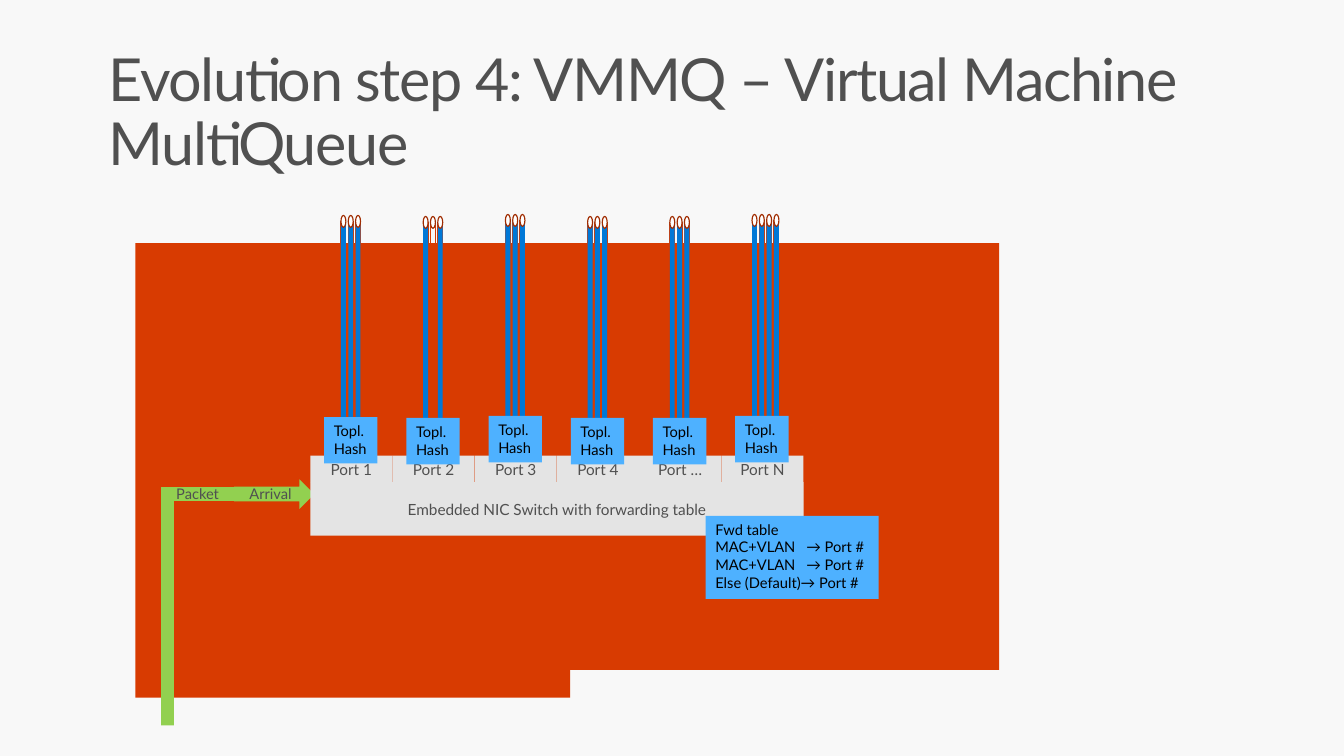
import pptx
import pptx.util
import pptx.dml.color
import pptx.enum.shapes
import pptx.enum.text
import pptx.oxml
import pptx.oxml.ns

Inches = pptx.util.Inches
KIND = pptx.enum.shapes.MSO_SHAPE
ALIGN = pptx.enum.text.PP_ALIGN
ANCHOR = pptx.enum.text.MSO_ANCHOR
GRAY, ORANGE, BLUE, SKY, GREEN, PALE = "505050", "D83B01", "0078D7", "4EB1FF", "92D050", "E4E4E4"
STEP = 0.832
PORTS = [("Port 1", 4.22), ("Port 2", 4.23), ("Port 3", 4.21),
         ("Port 4", 4.23), ("Port …", 4.23), ("Port N", 4.21)]


def paint(target, color):
    if hasattr(target, "solid"):
        target.solid()
        target = target.fore_color
    target.rgb = pptx.dml.color.RGBColor.from_string(color)


def write(shape, text, size, color=GRAY, align=ALIGN.CENTER, **frame):
    """Set the text; frame holds values for the text frame."""
    body = shape.text_frame
    body.text = text
    for name, value in frame.items():
        setattr(body, name, value)
    for para in body.paragraphs:
        para.alignment = align
        for name, value in {"name": "Lato", "size": pptx.util.Pt(size)}.items():
            setattr(para.font, name, value)
        paint(para.font.color, color)
    return body


def add_box(shapes, box, fill, kind=KIND.RECTANGLE, edge=None):
    shape = shapes.add_shape(kind, *map(Inches, box))
    shape.shadow.inherit = False
    paint(shape.fill, fill)
    if edge:
        paint(shape.line.fill, edge)
        shape.line.width = pptx.util.Pt(0.85)
    else:
        shape.line.fill.background()
    return shape


def add_line(shapes, x, top, end):
    line = shapes.add_connector(pptx.enum.shapes.MSO_CONNECTOR.STRAIGHT,
                                *map(Inches, (x, top, x, end)))
    paint(line.line.fill, ORANGE)
    line.line.width = pptx.util.Pt(0.75)
    props = line._element.spPr
    props.append(props.makeelement(pptx.oxml.ns.qn("a:effectLst"), {}))


def add_title(slide, box):
    shape = slide.shapes.add_textbox(*map(Inches, box))
    edge = Inches(0.16)
    rim = Inches(0.1)
    body = write(shape, "Evolution step 4: VMMQ – Virtual Machine MultiQueue", 43.2,
                 align=ALIGN.LEFT, word_wrap=True, margin_left=edge,
                 margin_right=edge, margin_top=rim, margin_bottom=rim)
    para = body.paragraphs[0]
    para.line_spacing = 0.9
    para.runs[0].font._element.set("spc", "-100")


def add_card(slide, x, y):
    add_box(slide.shapes, (x, y, 8.74, 4.32), ORANGE)
    add_box(slide.shapes, (x, y + 4.32, 4.4, 0.28), ORANGE)


def add_switch(slide, x, y):
    for i, (port, top) in enumerate(PORTS):
        cell = add_box(slide.shapes, (x + i * STEP, y, 0.83, 0.27), PALE)
        write(cell, port, 11.2, vertical_anchor=ANCHOR.MIDDLE)
    base = add_box(slide.shapes, (x, y + 0.27, 6 * STEP, 0.54), PALE)
    write(base, "Embedded NIC Switch with forwarding table", 11.2,
          vertical_anchor=ANCHOR.MIDDLE)


def add_packet(slide, x, y):
    """Draw the path of an arriving packet, with its bend at x, y."""
    add_box(slide.shapes, (x, y + 0.14, 0.13, 2.27), GREEN)
    for text, box, kind in [
            ("Packet", (x, y, 0.74, 0.14), KIND.RECTANGLE),
            ("Arrival", (x + 0.74, y - 0.08, 0.81, 0.3), KIND.RIGHT_ARROW)]:
        part = add_box(slide.shapes, box, GREEN, kind)
        write(part, text, 10.7, vertical_anchor=ANCHOR.MIDDLE)


def add_table(slide, box):
    """Draw the forwarding table, with its arrows on a tab stop."""
    rows = ["Fwd table", "MAC+VLAN\t→ Port #", "MAC+VLAN\t→ Port #", "Else (Default)→ Port #"]
    body = write(add_box(slide.shapes, box, SKY), "\n".join(rows), 10.7, "000000",
                 ALIGN.LEFT, word_wrap=False, vertical_anchor=ANCHOR.TOP)
    for para in body.paragraphs:
        props = para._p.get_or_add_pPr()
        tabs = pptx.oxml.parse_xml(
            f'<a:tabLst {pptx.oxml.ns.nsdecls("a")}>'
            f'<a:tab pos="{Inches(0.92)}" algn="l"/></a:tabLst>')
        props.insert_element_before(tabs, "a:defRPr", "a:extLst")


def add_queues(slide, x, y, count, bare=None):
    """Draw a hash box at x, y with queues above it; the bare one has no fill."""
    shapes = slide.shapes.add_group_shape().shapes
    top, end = y - 1.98, y + 0.12
    for i in range(count):
        left = x + 0.17 + i * 0.074
        for side in (left, left + 0.05):
            add_line(shapes, side, top, end)
        if i != bare:
            add_box(shapes, (left, top, 0.05, end - top), BLUE)
        add_box(shapes, (left, top - 0.06, 0.05, 0.12), "FFFFFF", KIND.OVAL, "A02C01")
    label = add_box(shapes, (x, y, 0.54, 0.47), SKY)
    write(label, "Topl.\vHash", 10.7, "000000", ALIGN.LEFT,
          word_wrap=True, vertical_anchor=ANCHOR.TOP)


def main():
    deck = pptx.Presentation()
    deck.slide_width, deck.slide_height = Inches(13.6), Inches(7.65)
    slide = deck.slides.add_slide(deck.slide_layouts[6])
    paint(slide.background.fill, "F8F8F8")
    add_title(slide, (0.94, 0.41, 11.73, 0.58))
    add_card(slide, 1.37, 2.46)
    add_packet(slide, 1.63, 4.93)
    add_switch(slide, 3.14, 4.61)
    add_table(slide, (7.14, 5.22, 1.75, 0.84))
    for i, (port, top) in enumerate(PORTS):
        add_queues(slide, 3.28 + i * STEP, top, 4 if port == "Port N" else 3,
                   1 if port == "Port 2" else None)
    deck.save("out.pptx")


if __name__ == "__main__":
    main()
